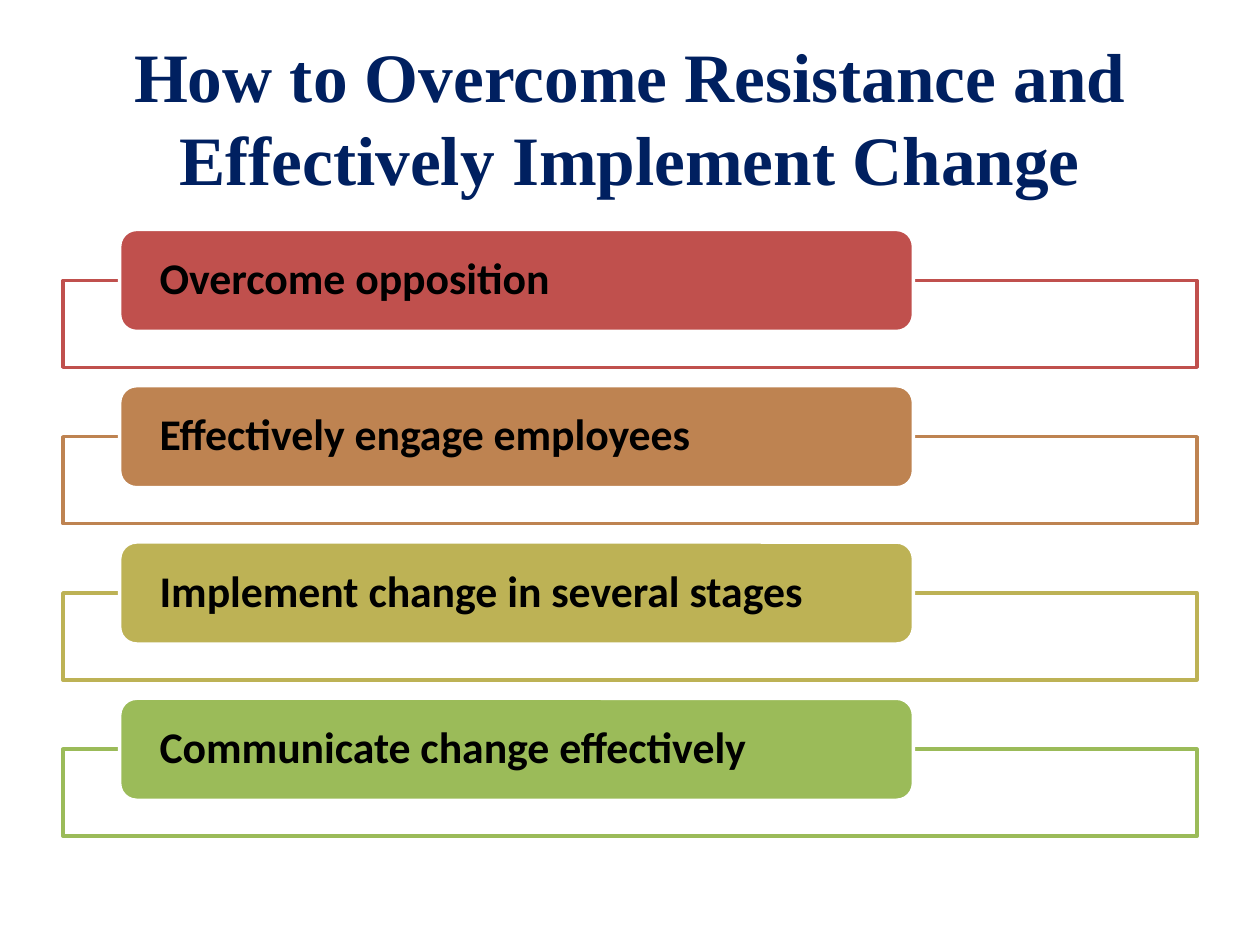
from dataclasses import dataclass

from lxml import etree
from pptx import Presentation
from pptx.dml.color import RGBColor
from pptx.enum.shapes import MSO_SHAPE
from pptx.enum.text import MSO_ANCHOR, MSO_AUTO_SIZE, PP_ALIGN
from pptx.oxml.ns import qn
from pptx.util import Pt

RECTANGLE = MSO_SHAPE.RECTANGLE
ROUNDED = MSO_SHAPE.ROUNDED_RECTANGLE
MIDDLE = MSO_ANCHOR.MIDDLE
NO_AUTOFIT = MSO_AUTO_SIZE.NONE
LEFT, CENTER = PP_ALIGN.LEFT, PP_ALIGN.CENTER

TITLE = "How to Overcome Resistance and Effectively Implement Change"
STEPS = [
    ("Overcome opposition", "C0504D"),
    ("Effectively engage employees", "BE8351"),
    ("Implement change in several stages", "BDB255"),
    ("Communicate change effectively", "9BBB59"),
]


@dataclass(frozen=True)
class Theme:
    title_font: str = "Times New Roman"
    title_size: float = 39.6
    title_color: str = "002060"
    step_font: str = "Calibri"
    step_size: float = 25
    step_color: str = "000000"
    white: str = "FFFFFF"
    line_width: float = 2


THEME = Theme()

# Lengths in points
SLIDE_SIZE = (720, 540)
TITLE_BOX = (36, 21.6, 648, 90)
FIRST_LABEL_TOP = 131.1
STEP_PITCH = 89.3
LABEL_LEFT, LABEL_WIDTH, LABEL_HEIGHT = 68.4, 453.6, 58.3
FRAME_LEFT, FRAME_WIDTH, FRAME_HEIGHT = 36, 648, 49.7
LABEL_INSET = 20


def add_box(group, kind, box, fill, line):
    shape = group.shapes.add_shape(kind, *map(Pt, box))
    shape.shadow.inherit = False
    shape.fill.solid()
    shape.fill.fore_color.rgb = RGBColor.from_string(fill)
    shape.line.color.rgb = RGBColor.from_string(line)
    shape.line.width = Pt(THEME.line_width)
    return shape


def set_opacity(shape, percent):
    color = shape.fill._xPr.find(qn("a:solidFill"))[0]
    etree.SubElement(color, qn("a:alpha"), val=str(percent * 1000))


def write_text(shape, text, alignment, font_name, size, color):
    frame = shape.text_frame
    frame.word_wrap = True
    frame.auto_size = NO_AUTOFIT
    frame.vertical_anchor = MIDDLE
    paragraph = frame.paragraphs[0]
    paragraph.alignment = alignment
    run = paragraph.add_run()
    run.text = text
    run.font.name = font_name
    run.font.size = Pt(size)
    run.font.bold = True
    run.font.color.rgb = RGBColor.from_string(color)
    return paragraph


def add_title(slide):
    title = slide.shapes.title
    title.left, title.top, title.width, title.height = map(Pt, TITLE_BOX)
    write_text(title, TITLE, CENTER, THEME.title_font, THEME.title_size,
               THEME.title_color)


def add_step(group, index, text, color):
    label_top = FIRST_LABEL_TOP + index * STEP_PITCH
    frame_top = label_top + LABEL_HEIGHT / 2  # frame starts at the label's middle
    frame = add_box(group, RECTANGLE,
                    (FRAME_LEFT, frame_top, FRAME_WIDTH, FRAME_HEIGHT),
                    THEME.white, color)
    set_opacity(frame, 90)

    label = add_box(group, ROUNDED,
                    (LABEL_LEFT, label_top, LABEL_WIDTH, LABEL_HEIGHT),
                    color, THEME.white)
    paragraph = write_text(label, text, LEFT, THEME.step_font,
                           THEME.step_size, THEME.step_color)
    paragraph.line_spacing = 0.9
    text_frame = label.text_frame
    text_frame.margin_left = text_frame.margin_right = Pt(LABEL_INSET)
    text_frame.margin_top = text_frame.margin_bottom = Pt(0)


def main():
    presentation = Presentation()
    presentation.slide_width, presentation.slide_height = map(Pt, SLIDE_SIZE)
    title_only = presentation.slide_layouts[5]
    slide = presentation.slides.add_slide(title_only)
    add_title(slide)
    steps_group = slide.shapes.add_group_shape()
    for index, (text, color) in enumerate(STEPS):
        add_step(steps_group, index, text, color)
    presentation.save("out.pptx")


if __name__ == "__main__":
    main()
